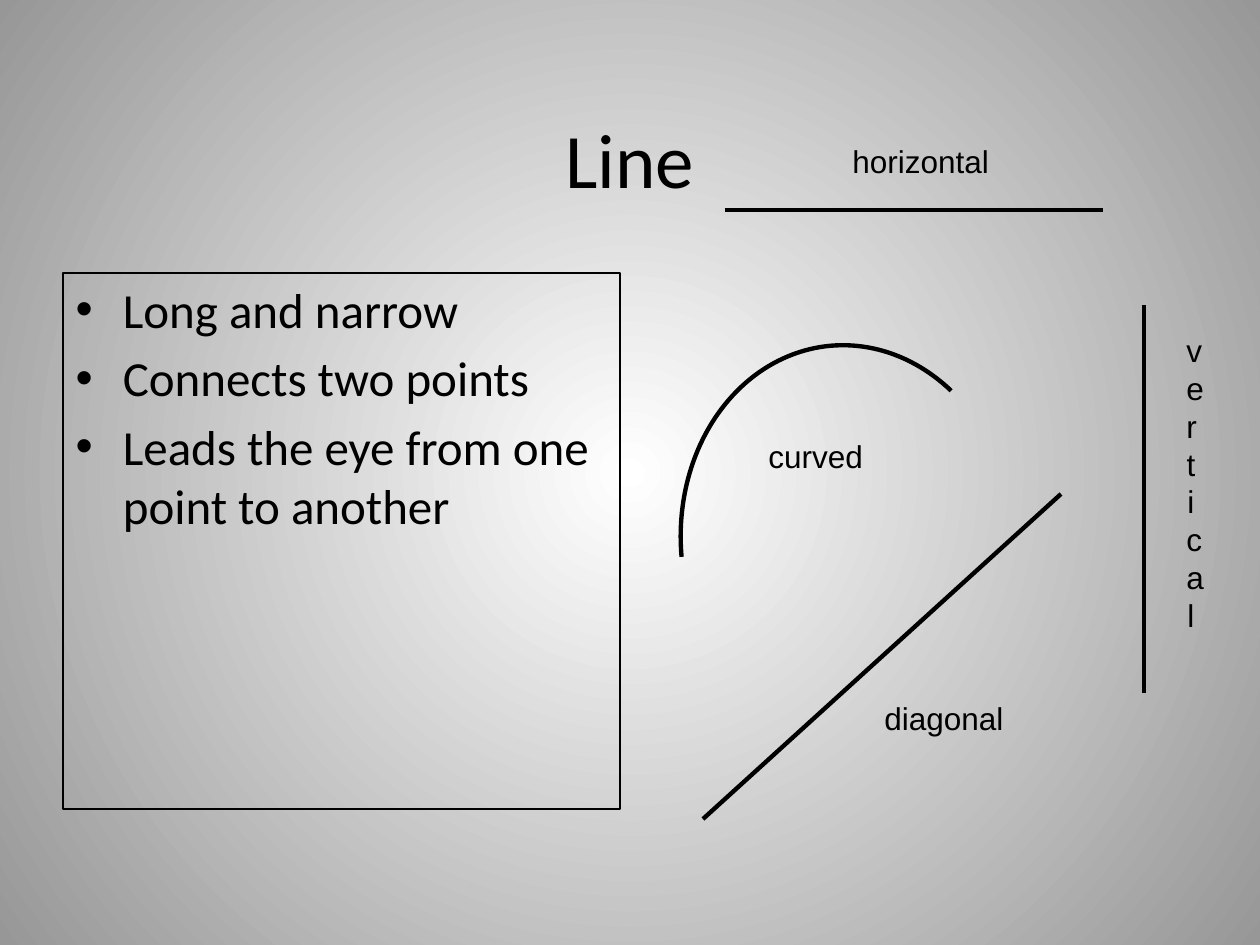
import pptx
import pptx.util
import pptx.oxml
import pptx.oxml.ns
import pptx.dml.color
import pptx.enum.shapes
import pptx.enum.text
import lxml.etree

PX = 914400 / 126
COLORS = {"ink": "000000", "center": "FFFFFF", "edge": "979797"}
INK = pptx.dml.color.RGBColor.from_string(COLORS["ink"])
qn = pptx.oxml.ns.qn


def px(*lengths):
    return [round(length * PX) for length in lengths]


def style_text(frame, font_name, size):
    for paragraph in frame.paragraphs:
        for run in paragraph.runs:
            run.font.name = font_name
            run.font.size = pptx.util.Pt(size)
            run.font.color.rgb = INK


deck = pptx.Presentation()
deck.slide_width, deck.slide_height = px(1260, 945)
slide = deck.slides.add_slide(deck.slide_layouts[1])

# Background: gradient spreading from the centre
background = slide.background.fill
background.gradient()
for stop, key in zip(background.gradient_stops, ("center", "edge")):
    stop.color.rgb = pptx.dml.color.RGBColor.from_string(COLORS[key])
background.gradient_stops[0].position = 0
background.gradient_stops[1].position = 1
linear = slide.element.find(".//" + qn("a:lin"))
radial = lxml.etree.Element(qn("a:path"), {"path": "circle"})
lxml.etree.SubElement(radial, qn("a:fillToRect"),
                      {side: "50000" for side in "ltrb"})
linear.getparent().replace(linear, radial)

# Title
title = slide.shapes.title
title.left, title.top, title.width, title.height = px(63, 63, 1134, 189)
title.text_frame.text = "Line"
style_text(title.text_frame, "Calibri", 44)

# Framed list of properties
properties = slide.placeholders[1]
(properties.left, properties.top,
 properties.width, properties.height) = px(63, 273, 557, 536)
properties.line.color.rgb = INK
properties.line.width = pptx.util.Pt(0.75)
properties.text_frame.text = "\n".join([
    "Long and narrow",
    "Connects two points",
    "Leads the eye from one point to another",
])
style_text(properties.text_frame, "Calibri", 28)

# Horizontal, vertical and diagonal lines
for ends in [(725, 210, 1103, 210),
             (1144, 305, 1144, 693),
             (703, 819, 1061, 494)]:
    straight = slide.shapes.add_connector(
        pptx.enum.shapes.MSO_CONNECTOR.STRAIGHT, *px(*ends))
    straight.line.color.rgb = INK
    straight.line.width = pptx.util.Pt(2.5)
    lxml.etree.SubElement(straight.element.spPr, qn("a:effectLst"))

# Curved line: arc angles are stored in 60000ths of a degree
curve = slide.shapes.add_shape(
    pptx.enum.shapes.MSO_SHAPE.ARC, *px(681, 345, 334, 394))
for index, degrees in enumerate((180, 309.4)):
    curve.adjustments[index] = degrees * 60000 / 100000
curve.rotation = -5.1
curve.shadow.inherit = False
curve.fill.background()
curve.line.color.rgb = INK
curve.line.width = pptx.util.Pt(2.5)

# Names of the lines
for name, box in [("horizontal", (840, 136, 189, 50)),
                  ("curved", (756, 431, 126, 50)),
                  ("vertical", (1174, 325, 34, 315)),
                  ("diagonal", (872, 693, 158, 50))]:
    label = slide.shapes.add_textbox(*px(*box))
    label.text_frame.word_wrap = True
    label.text_frame.auto_size = pptx.enum.text.MSO_AUTO_SIZE.SHAPE_TO_FIT_TEXT
    label.text_frame.text = name
    style_text(label.text_frame, "Arial", 18)
    if name == "vertical":
        label.text_frame.paragraphs[0].alignment = pptx.enum.text.PP_ALIGN.CENTER

deck.save("out.pptx")
